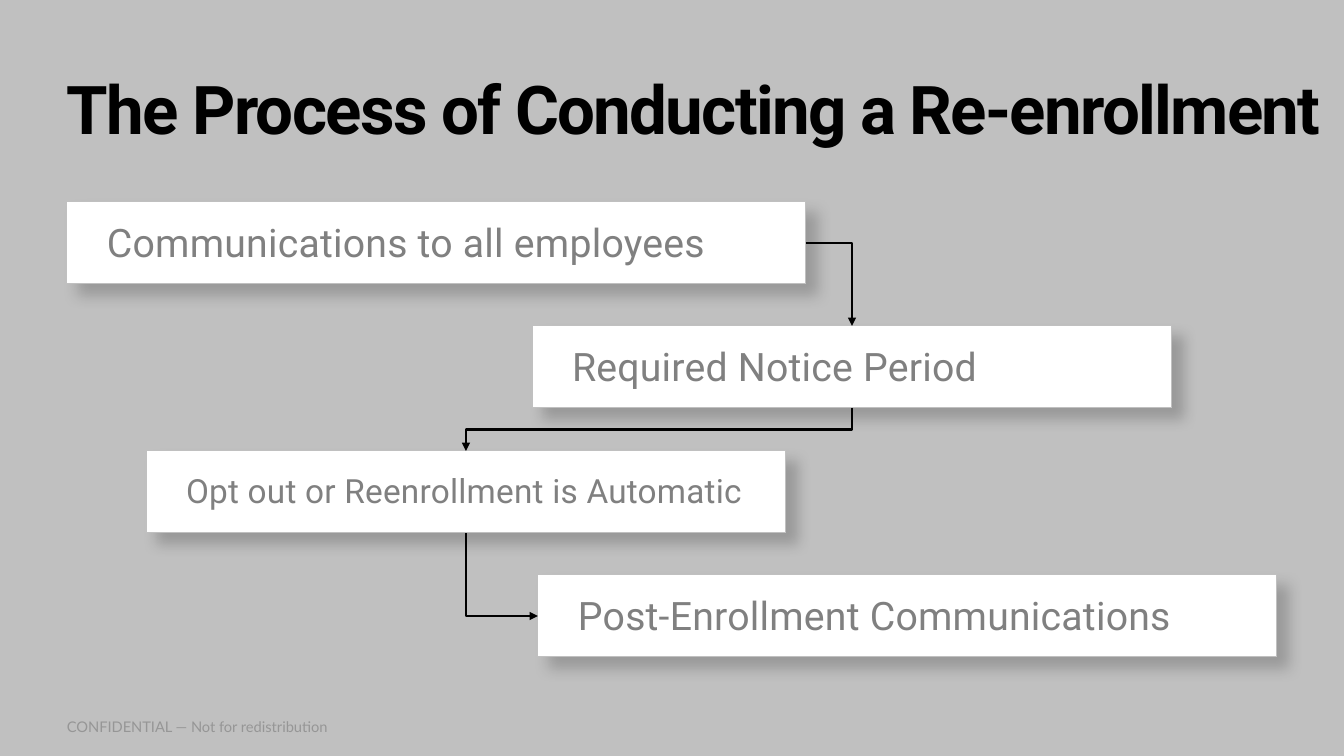
from lxml.etree import SubElement
from pptx import Presentation
from pptx.dml.color import RGBColor
from pptx.enum.shapes import MSO_CONNECTOR, MSO_SHAPE
from pptx.enum.text import MSO_ANCHOR, MSO_AUTO_SIZE, PP_ALIGN
from pptx.oxml.ns import qn
from pptx.util import Pt

BLACK = RGBColor(0x00, 0x00, 0x00)
WHITE = RGBColor(0xFF, 0xFF, 0xFF)
SILVER = RGBColor(0xC0, 0xC0, 0xC0)
GRAY = RGBColor(0x80, 0x80, 0x80)
FAINT = RGBColor(0x96, 0x96, 0x96)
SCALE = 914400 / 100.8


def px(*nums):
    return [round(n * SCALE) for n in nums]


class Deck:
    sides = ("left", "top", "right", "bottom")
    head = {"name": "Roboto", "size": Pt(48), "bold": True}
    step = {"name": "Roboto", "size": Pt(28)}
    foot = {"name": "Lato", "size": Pt(10.5)}

    def __init__(self):
        self.prs = Presentation()
        self.prs.slide_width, self.prs.slide_height = px(1344, 756)
        self.slide = self.prs.slides.add_slide(self.prs.slide_layouts[5])
        fill = self.slide.background.fill
        fill.solid()
        fill.fore_color.rgb = SILVER

    def label(self, shape, text, font, color, pads=(0, 0, 0, 0), line=1.0,
              after=0, track=0, fit=MSO_AUTO_SIZE.NONE, anchor=MSO_ANCHOR.MIDDLE):
        frame = shape.text_frame
        frame.word_wrap = True
        frame.auto_size = fit
        frame.vertical_anchor = anchor
        for side, pad in zip(self.sides, px(*pads)):
            setattr(frame, "margin_" + side, pad)
        para = frame.paragraphs[0]
        form = {"alignment": PP_ALIGN.LEFT, "line_spacing": line,
                "space_before": Pt(0), "space_after": Pt(after)}
        for key, val in form.items():
            setattr(para, key, val)
        run = para.add_run()
        run.text = text
        for key, val in font.items():
            setattr(run.font, key, val)
        run.font.color.rgb = color
        if track:
            run.font._element.set("spc", str(track))

    def title(self, text, *box):
        shape = self.slide.shapes.title
        shape.left, shape.top, shape.width, shape.height = px(*box)
        self.label(shape, text, self.head, BLACK, line=0.9, track=-120)

    def note(self, text, *box):
        shape = self.slide.shapes.add_textbox(*px(*box))
        self.label(shape, text, self.foot, FAINT,
                   fit=MSO_AUTO_SIZE.SHAPE_TO_FIT_TEXT, anchor=MSO_ANCHOR.TOP)

    def card(self, text, box, size=28, line=0.95):
        shape = self.slide.shapes.add_shape(MSO_SHAPE.RECTANGLE, *px(*box))
        shape.fill.solid()
        shape.fill.fore_color.rgb = WHITE
        shape.line.color.rgb = SILVER
        shape.line.width = Pt(0.75)
        self.shade(shape)
        self.label(shape, text, self.step | {"size": Pt(size)}, GRAY,
                   (40, 20, 40, 17), line, 6, 20)

    def shade(self, shape):
        shape.shadow.inherit = False
        effect = shape._element.spPr.find(qn("a:effectLst"))
        outer = SubElement(effect, qn("a:outerShdw"), blurRad=str(int(Pt(10))),
                           dist=str(int(Pt(10))), dir="2700000", algn="tl",
                           rotWithShape="0")
        color = SubElement(outer, qn("a:srgbClr"), val=str(BLACK))
        SubElement(color, qn("a:alpha"), val="20000")

    def link(self, start, end, kind, down=False):
        (x1, y1), (x2, y2) = start, end
        turn = 0
        if down:
            # A link that leaves downward is a level one turned about its middle
            midx, midy = (x1 + x2) / 2, (y1 + y2) / 2
            wide, tall = y2 - y1, abs(x2 - x1)
            turn = 90 if x2 < x1 else 270
            if turn == 270:
                wide = -wide
            x1, x2 = midx - wide / 2, midx + wide / 2
            y1, y2 = midy - tall / 2, midy + tall / 2
        line = self.slide.shapes.add_connector(MSO_CONNECTOR.ELBOW, *px(x1, y1, x2, y2))
        line.line.color.rgb = BLACK
        line.line.width = Pt(1.5)
        props = line._element.spPr
        props.find(qn("a:prstGeom")).set("prst", kind)
        if turn:
            props.find(qn("a:xfrm")).set("rot", str(turn * 60000))
        SubElement(props.find(qn("a:ln")), qn("a:tailEnd"), type="triangle")
        SubElement(props, qn("a:effectLst"))


def main():
    deck = Deck()

    # Footer and title
    deck.note("CONFIDENTIAL — Not for redistribution", 67, 718, 671, 18)
    deck.title("The Process of Conducting a Re-enrollment", 67, 40, 1277, 146)

    # Steps
    long, short, high = 739, 640, 82
    tops = [202, 326, 451, 575]
    lefts = [67, 532, 146, 538]
    wides = [long, short, short, long]
    texts = ["Communications to all employees", "Required Notice Period",
             "Opt out or Reenrollment is Automatic", "Post-Enrollment Communications"]
    forms = [{}, {}, {"size": 23.8, "line": 0.85}, {}]
    boxes = list(zip(lefts, tops, wides, [high] * 4))
    for text, box, form in zip(texts, boxes, forms):
        deck.card(text, box, **form)

    # Links between steps
    mids = [left + wide // 2 for left, wide in zip(lefts, wides)]
    half = high // 2
    deck.link((lefts[0] + long, tops[0] + half), (mids[1], tops[1]), "bentConnector2")
    deck.link((mids[1], tops[1] + high), (mids[2], tops[2]), "bentConnector3", True)
    deck.link((mids[2], tops[2] + high), (lefts[3], tops[3] + half),
              "bentConnector2", True)

    deck.prs.save("out.pptx")


if __name__ == "__main__":
    main()
